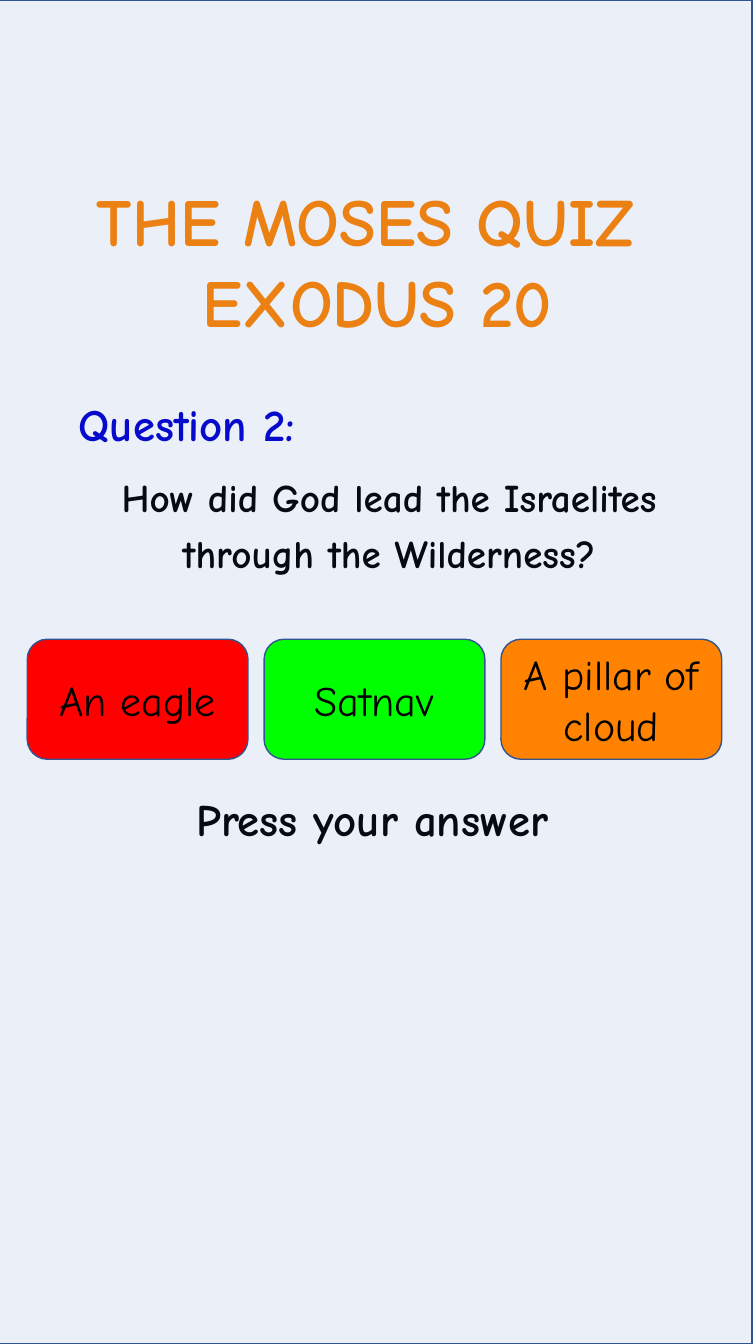
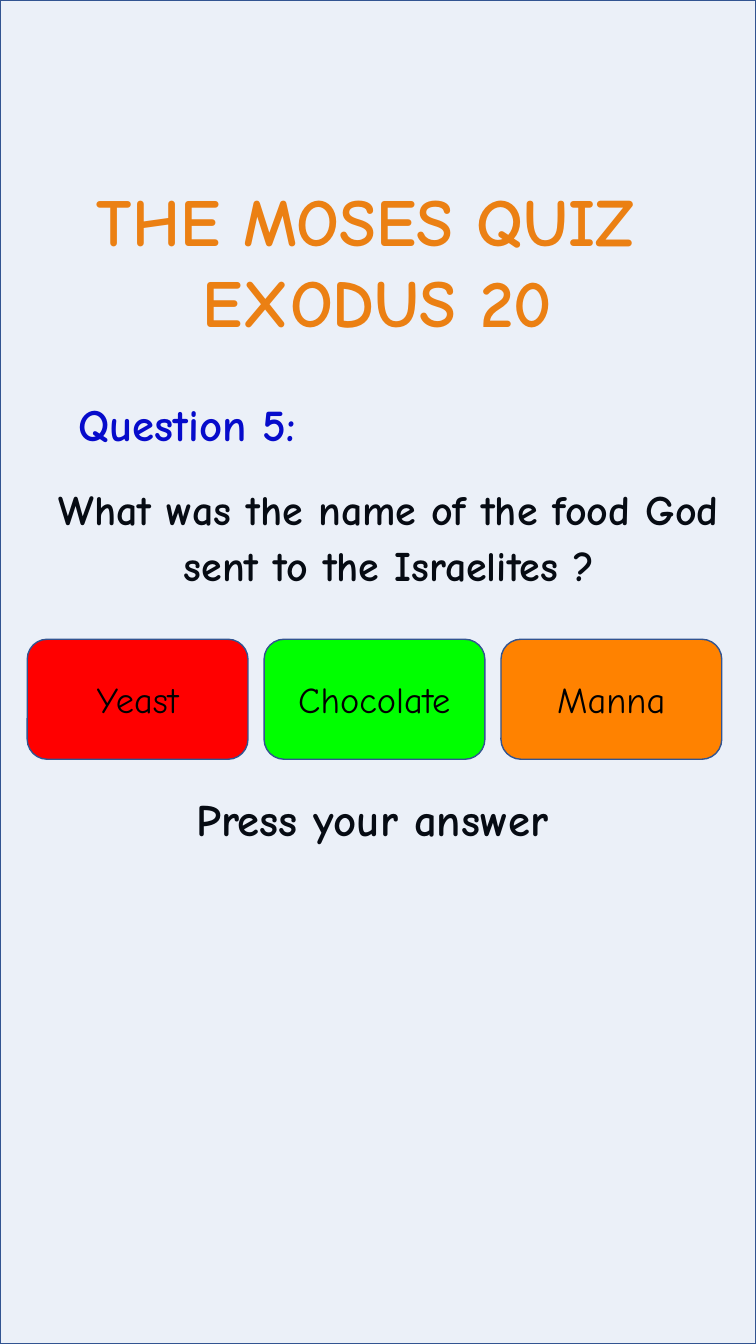
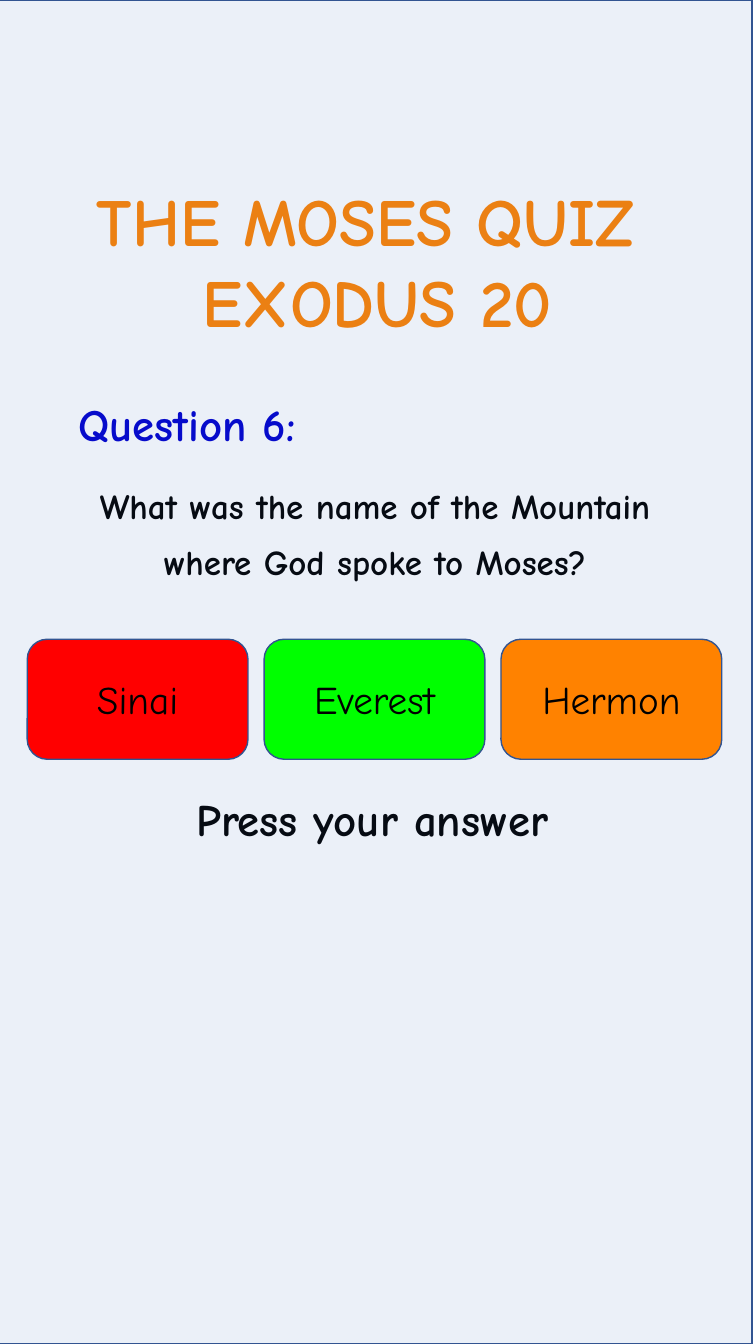
import pptx
import pptx.util
import pptx.dml.color
import pptx.enum.shapes
import pptx.enum.text
import pptx.oxml
import pptx.oxml.ns

Inches, Pt = pptx.util.Inches, pptx.util.Pt
ALIGN = pptx.enum.text.PP_ALIGN
SHAPE = pptx.enum.shapes.MSO_SHAPE

WIDTH, HEIGHT = 7.5, 13.33
FONT = "Comic Neue"
COLOURS = {
    "title": "FF8200", "label": "0000CC", "text": "000000",
    "tint": "4472C4", "line": "325491",
    "red": "FF0000", "green": "00FF00", "orange": "FF8200",
}
TITLE = ["THE MOSES QUIZ ", "EXODUS 20"]
PROMPT = "Press your answer"
BUTTON_FILLS = ["red", "green", "orange"]
BUTTON_LEFT, BUTTON_TOP, BUTTON_PITCH = 0.27, 6.34, 2.35
BUTTON_WIDTH, BUTTON_HEIGHT = 2.19, 1.19

QUESTIONS = [
    {"number": 2, "frame_left": -0.04, "box": (0.56, 4.56, 6.6, 1.46),
     "question": "How did God lead the Israelites through the Wilderness?",
     "size": 28, "answers": ["An eagle", "Satnav", "A pillar of cloud"], "answer_size": 30},
    {"number": 5, "frame_left": 0, "box": (0.39, 4.69, 6.94, 1.46),
     "question": "What was the name of the food God sent to the Israelites ?",
     "size": 30, "answers": ["Yeast", "Chocolate", "Manna"], "answer_size": 26},
    {"number": 6, "frame_left": -0.04, "box": (0.42, 4.62, 6.6, 1.46),
     "question": "What was the name of the Mountain where God spoke to Moses?",
     "size": 25, "answers": ["Sinai", "Everest", "Hermon"], "answer_size": 28},
]


def rgb(name):
    return pptx.dml.color.RGBColor.from_string(COLOURS[name])


def write(tf, lines, size, colour="text", bold=True, align=ALIGN.CENTER,
          wrap=True, spacing=None, before=None):
    tf.word_wrap = wrap
    tf.text = "\n".join(lines)
    for p in tf.paragraphs:
        p.alignment = align
        p.line_spacing = spacing
        p.space_before = before
        for r in p.runs:
            r.font.name = FONT
            r.font.size = Pt(size)
            r.font.bold = bold
            r.font.color.rgb = rgb(colour)


def add_text(s, box, lines, size, **style):
    sp = s.shapes.add_textbox(*map(Inches, box))
    write(sp.text_frame, lines, size, **style)


def add_panel(s, kind, box, fill):
    sp = s.shapes.add_shape(kind, *map(Inches, box))
    sp.shadow.inherit = False
    sp.fill.solid()
    sp.fill.fore_color.rgb = rgb(fill)
    sp.line.color.rgb = rgb("line")
    sp.line.width = Pt(1)
    return sp


def add_tint(s, left):
    sp = add_panel(s, SHAPE.RECTANGLE, (left, 0, WIDTH, HEIGHT), "tint")
    colour = sp.fill._xPr.find(pptx.oxml.ns.qn("a:solidFill"))[0]
    alpha = pptx.oxml.parse_xml("<a:alpha %s val='10000'/>" % pptx.oxml.ns.nsdecls("a"))
    colour.append(alpha)


def add_buttons(s, answers, size):
    for i, (answer, fill) in enumerate(zip(answers, BUTTON_FILLS)):
        box = (BUTTON_LEFT + i * BUTTON_PITCH, BUTTON_TOP, BUTTON_WIDTH, BUTTON_HEIGHT)
        sp = add_panel(s, SHAPE.ROUNDED_RECTANGLE, box, fill)
        sp.text_frame.vertical_anchor = pptx.enum.text.MSO_ANCHOR.MIDDLE
        write(sp.text_frame, [answer], size, bold=False)


def add_question(prs, q):
    s = prs.slides.add_slide(prs.slide_layouts[6])
    add_text(s, (0.3, 1.73, 6.89, 1.72), TITLE, 48, colour="title", wrap=False)
    add_text(s, (0.47, 3.89, 2.77, 0.64), [f"Question {q['number']}:"], 32,
             colour="label", wrap=False)
    add_text(s, q["box"], [q["question"]], q["size"], spacing=Pt(40), before=Pt(7.5))
    add_text(s, (1.85, 7.86, 4.22, 0.72), [PROMPT], 32,
             align=ALIGN.LEFT, spacing=0.9, before=Pt(7.5))
    add_tint(s, q["frame_left"])
    add_buttons(s, q["answers"], q["answer_size"])


def main():
    prs = pptx.Presentation()
    prs.slide_width, prs.slide_height = Inches(WIDTH), Inches(HEIGHT)
    for q in QUESTIONS:
        add_question(prs, q)
    prs.save("out.pptx")


if __name__ == "__main__":
    main()
